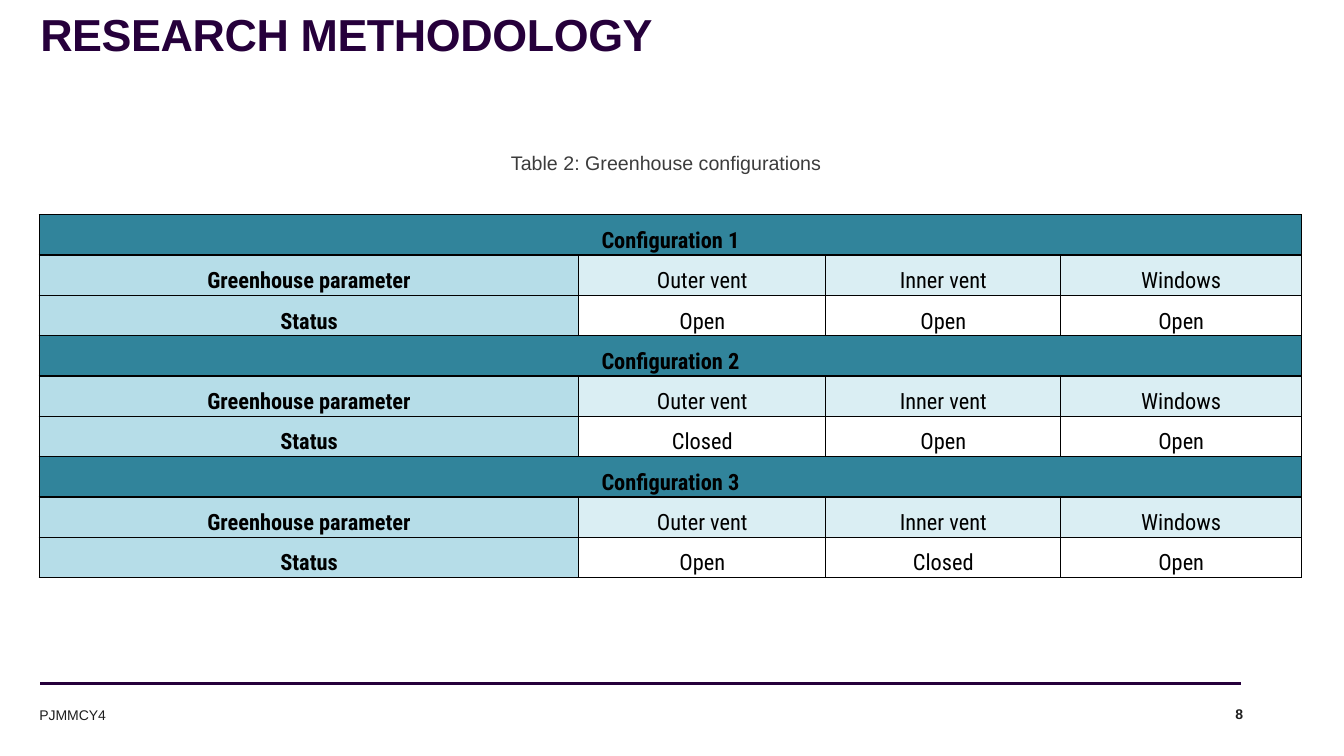
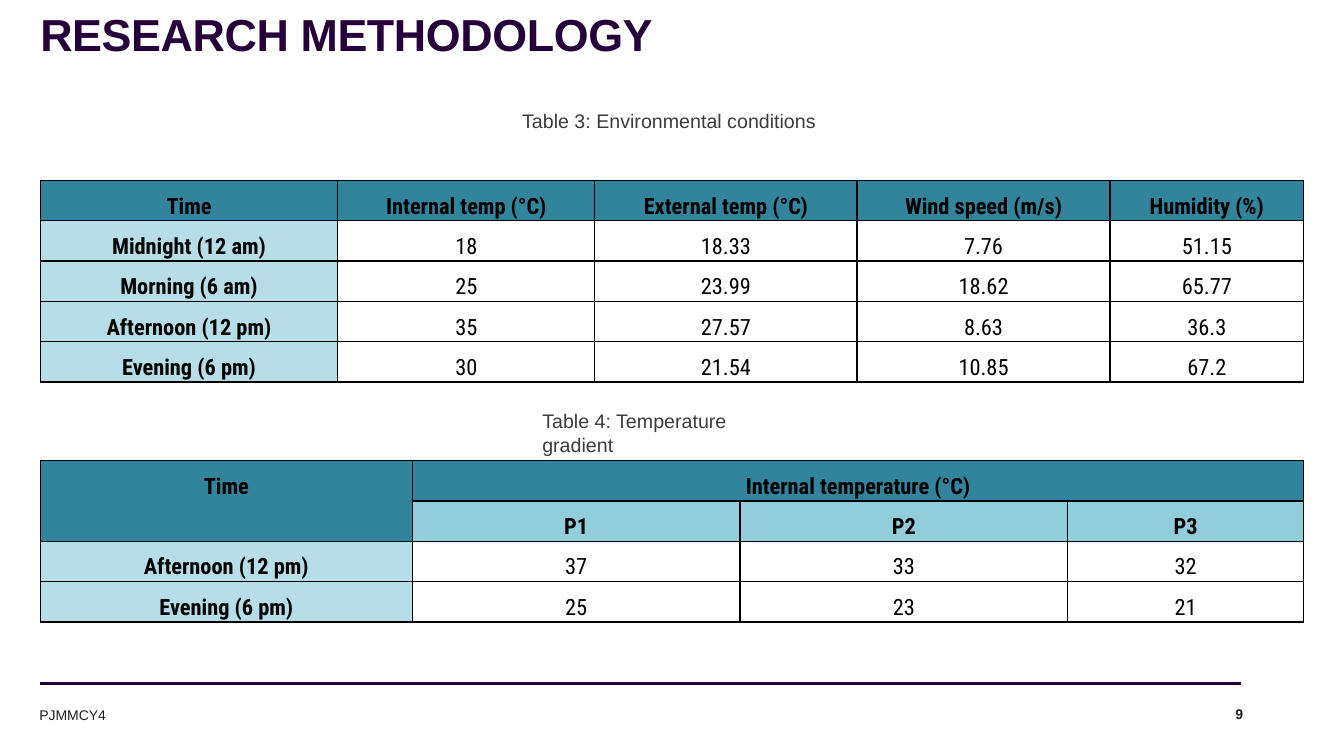
from dataclasses import dataclass
from typing import Optional

from lxml.etree import SubElement
from pptx import Presentation
from pptx.dml.color import RGBColor as RGB
from pptx.enum.shapes import MSO_CONNECTOR as CONN
from pptx.enum.text import MSO_ANCHOR as ANCHOR, PP_ALIGN as ALIGN
from pptx.oxml.ns import qn
from pptx.util import Inches, Pt


# Theme: colours, fonts and type sizes
@dataclass(frozen=True)
class Theme:
    purple: str = "26003B"
    ink: str = "1E1E1E"
    grey: str = "3C3C3C"
    black: str = "000000"
    header: str = "31849B"
    subheader: str = "92CDDC"
    label: str = "B6DDE8"
    pale: str = "DAEEF3"
    font: str = "Arial"
    table_font: str = "Roboto Condensed"
    title_size: int = 32
    table_size: int = 16
    caption_size: int = 14
    footer_size: int = 10


T = Theme()


@dataclass(frozen=True)
class TextStyle:
    size: int
    color: str
    bold: bool = False
    font: str = T.font
    align: ALIGN = ALIGN.LEFT
    line_spacing: Optional[float] = None
    tracking: int = 0  # hundredths of a point


@dataclass(frozen=True)
class Box:
    left: float
    top: float
    width: float
    height: float


@dataclass(frozen=True)
class Row:
    label: str
    values: tuple
    label_fill: str = T.label
    value_fill: Optional[str] = None
    bold: bool = False


@dataclass(frozen=True)
class Grid:
    left: float
    top: float
    row_height: float
    cols: tuple
    rows: tuple
    merges: tuple = ()  # first row, first column, last row, last column


@dataclass(frozen=True)
class Caption:
    text: str
    box: Box


@dataclass(frozen=True)
class Page:
    number: int
    grids: tuple
    captions: tuple


TITLE = TextStyle(T.title_size, T.purple, True, line_spacing=0.9, tracking=-30)
FOOTER = TextStyle(T.footer_size, T.ink, line_spacing=1.2)
NUMBER = TextStyle(T.footer_size, T.ink, True, align=ALIGN.RIGHT)
CAPTION = TextStyle(T.caption_size, T.grey)


# Text helpers
def style_text(tf, text: str, st: TextStyle) -> None:
    p = tf.paragraphs[0]
    p.text = text
    p.alignment = st.align
    if st.line_spacing:
        p.line_spacing = st.line_spacing
    for r in p.runs:
        r.font.name = st.font
        r.font.size = Pt(st.size)
        r.font.bold = st.bold
        r.font.color.rgb = RGB.from_string(st.color)
        if st.tracking:
            r.font._element.set("spc", str(st.tracking))


def add_text(s, text: str, box: Box, st: TextStyle,
             anchor: ANCHOR = ANCHOR.TOP, inset: bool = False) -> None:
    sp = s.shapes.add_textbox(Inches(box.left), Inches(box.top),
                              Inches(box.width), Inches(box.height))
    tf = sp.text_frame
    tf.word_wrap = True
    tf.vertical_anchor = anchor
    if not inset:
        tf.margin_left = tf.margin_right = tf.margin_top = tf.margin_bottom = 0
    style_text(tf, text, st)


# Table helpers
def add_borders(cell) -> None:
    tc_pr = cell._tc.get_or_add_tcPr()
    for side in ("a:lnL", "a:lnR", "a:lnT", "a:lnB"):
        ln = SubElement(tc_pr, qn(side), w=str(Pt(1)))
        fill = SubElement(ln, qn("a:solidFill"))
        SubElement(fill, qn("a:srgbClr"), val=T.black)


def format_cell(cell, text: str, fill: Optional[str], bold: bool) -> None:
    add_borders(cell)
    if fill:
        cell.fill.solid()
        cell.fill.fore_color.rgb = RGB.from_string(fill)
    else:
        cell.fill.background()
    cell.margin_left = cell.margin_right = Inches(0.07)
    cell.margin_top = cell.margin_bottom = 0
    style_text(cell.text_frame, text,
               TextStyle(T.table_size, T.black, bold, T.table_font,
                         ALIGN.CENTER, 1.5))


def add_grid(s, g: Grid) -> None:
    frame = s.shapes.add_table(
        len(g.rows), len(g.cols), Inches(g.left), Inches(g.top),
        Inches(sum(g.cols)), Inches(g.row_height * len(g.rows)))
    table = frame.table
    table.first_row = table.horz_banding = False
    for col, width in zip(table.columns, g.cols):
        col.width = Inches(width)
    for i, row in enumerate(g.rows):
        table.rows[i].height = Inches(g.row_height)
        format_cell(table.cell(i, 0), row.label, row.label_fill, True)
        for j, value in enumerate(row.values, start=1):
            format_cell(table.cell(i, j), value, row.value_fill, row.bold)
    for r1, c1, r2, c2 in g.merges:
        table.cell(r1, c1).merge(table.cell(r2, c2))


# Title, rule and footer on every slide
def add_frame(s, number: int) -> None:
    add_text(s, str(number), Box(11.79, 6.96, 0.54, 0.24), NUMBER, ANCHOR.MIDDLE)
    rule = s.shapes.add_connector(CONN.STRAIGHT, Inches(0.4), Inches(6.78),
                                  Inches(12.31), Inches(6.78))
    rule.line.color.rgb = RGB.from_string(T.purple)
    rule.line.width = Pt(2.25)
    SubElement(rule._element.spPr, qn("a:effectLst"))
    add_text(s, "RESEARCH METHODOLOGY", Box(0.4, 0.06, 12.93, 0.55), TITLE,
             ANCHOR.BOTTOM)
    add_text(s, "PJMMCY4", Box(0.39, 6.96, 9.84, 0.24), FOOTER, ANCHOR.MIDDLE)


# Content
def header_row(label: str, *values: str) -> Row:
    return Row(label, values, T.header, T.header, True)


def configuration(number: int, *status: str) -> tuple:
    return (header_row(f"Configuration {number}", "", "", ""),
            Row("Greenhouse parameter", ("Outer vent", "Inner vent", "Windows"),
                value_fill=T.pale),
            Row("Status", status))


CONFIGURATIONS = Grid(
    0.39, 2.13, 0.39, (5.35, 2.45, 2.33, 2.39),
    (*configuration(1, "Open", "Open", "Open"),
     *configuration(2, "Closed", "Open", "Open"),
     *configuration(3, "Open", "Closed", "Open")),
    tuple((i, 0, i, 3) for i in (0, 3, 6)))

CONDITIONS = Grid(
    0.4, 1.79, 0.4, (2.95, 2.55, 2.6, 2.51, 1.92),
    (header_row("Time", "Internal temp (°C)", "External temp (°C)",
                "Wind speed (m/s)", "Humidity (%)"),
     Row("Midnight (12 am)", ("18", "18.33", "7.76", "51.15")),
     Row("Morning (6 am)", ("25", "23.99", "18.62", "65.77")),
     Row("Afternoon (12 pm)", ("35", "27.57", "8.63", "36.3")),
     Row("Evening (6 pm)", ("30", "21.54", "10.85", "67.2"))))

GRADIENT = Grid(
    0.4, 4.57, 0.4, (3.69, 3.25, 3.25, 2.34),
    (header_row("Time", "Internal temperature (°C)", "", ""),
     Row("", ("P1", "P2", "P3"), T.header, T.subheader, True),
     Row("Afternoon (12 pm)", ("37", "33", "32")),
     Row("Evening (6 pm)", ("25", "23", "21"))),
    ((0, 0, 1, 0), (0, 1, 0, 3)))

PAGES = (
    Page(8, (CONFIGURATIONS,),
         (Caption("Table 2: Greenhouse configurations",
                  Box(4.97, 1.45, 3.36, 0.34)),)),
    Page(9, (CONDITIONS, GRADIENT),
         (Caption("Table 3: Environmental conditions",
                  Box(5.08, 1.03, 3.18, 0.34)),
          Caption("Table 4: Temperature gradient",
                  Box(5.28, 4.01, 2.78, 0.34)))),
)


def main() -> None:
    prs = Presentation()
    prs.slide_width, prs.slide_height = Inches(13.33), Inches(7.5)
    for page in PAGES:
        s = prs.slides.add_slide(prs.slide_layouts[6])
        add_frame(s, page.number)
        for grid in page.grids:
            add_grid(s, grid)
        for caption in page.captions:
            add_text(s, caption.text, caption.box, CAPTION, inset=True)
    prs.save("out.pptx")


if __name__ == "__main__":
    main()
